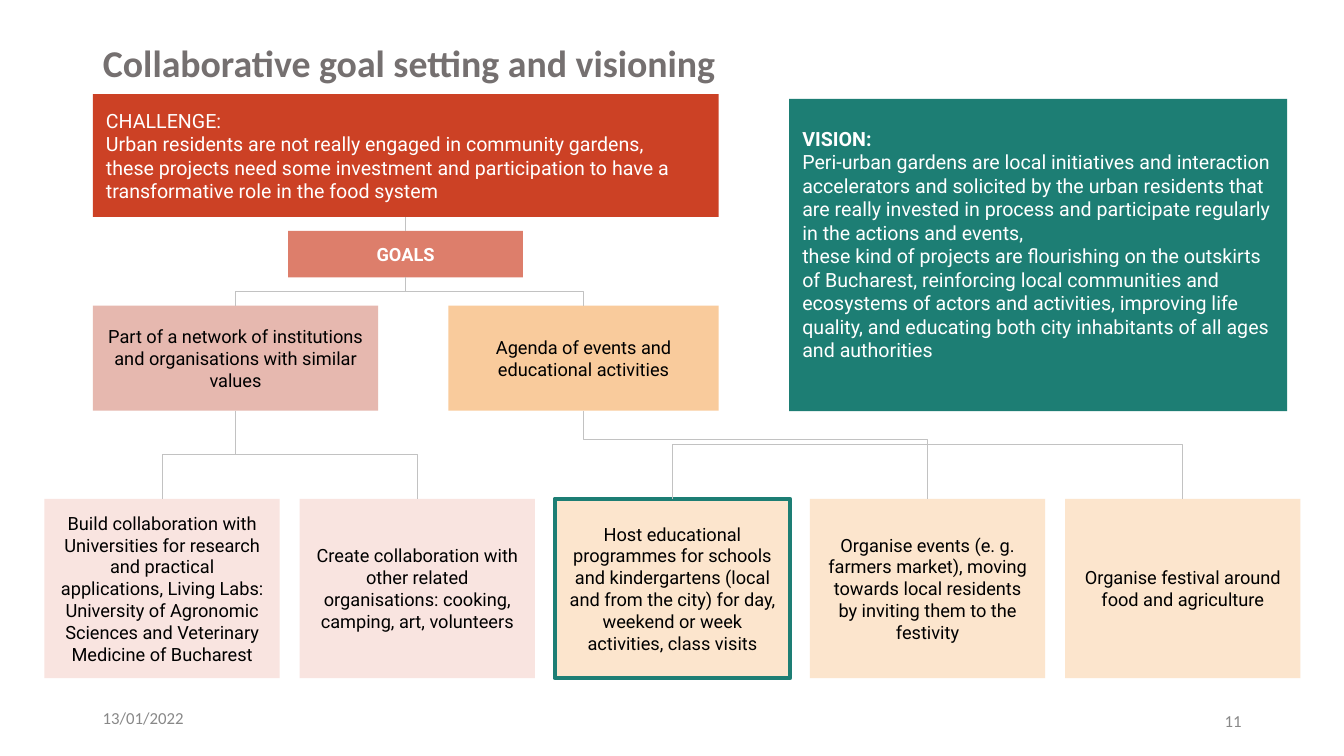
from lxml.etree import SubElement
from pptx import Presentation
from pptx.dml.color import RGBColor
from pptx.enum.shapes import MSO_CONNECTOR as Link, MSO_SHAPE as Preset
from pptx.enum.text import MSO_ANCHOR as Anchor, MSO_AUTO_SIZE as AutoSize, PP_ALIGN as Align
from pptx.oxml.ns import qn
from pptx.util import Cm, Pt

COLORS = {
    "white": "FFFFFF", "black": "000000", "title": "757070", "footer": "888888",
    "challenge": "CC4125", "goals": "DD7E6B", "vision": "1D7E74",
    "network": "E6B8AF", "agenda": "F9CB9C",
    "network_step": "F9E4E0", "agenda_step": "FCE5CD", "link": "C2C2C2",
}


def color(name):
    return RGBColor.from_string(COLORS[name])


class GoalSlide:
    heading_font = "Calibri"
    body_font = "Roboto"
    inset = 0.33

    def __init__(self, presentation):
        self.slide = presentation.slides.add_slide(presentation.slide_layouts[5])

    def fill_text(self, frame, lines, size, font, ink, align, bold_first=False):
        frame.word_wrap = True
        frame.auto_size = AutoSize.NONE
        frame.vertical_anchor = Anchor.MIDDLE
        for index, line in enumerate(lines):
            paragraph = frame.paragraphs[0] if index == 0 else frame.add_paragraph()
            paragraph.text = line
            paragraph.alignment = align
            paragraph.font.size = Pt(size)
            paragraph.font.name = font
            paragraph.font.bold = bold_first and index == 0
            paragraph.font.color.rgb = color(ink)

    def title(self, text, left, top, width, height):
        shape = self.slide.shapes.title
        shape.left, shape.top, shape.width, shape.height = map(Cm, (left, top, width, height))
        self.fill_text(shape.text_frame, [text], 27, self.heading_font, "title", Align.LEFT, True)
        shape.text_frame.paragraphs[0].line_spacing = 0.7

    def footer(self, text, left, top, align):
        shape = self.slide.shapes.add_textbox(Cm(left), Cm(top), Cm(7.62), Cm(1.02))
        self.fill_text(shape.text_frame, [text], 12, self.heading_font, "footer", align)

    def box(self, lines, left, top, width, height, fill, ink="black", size=13,
            align=Align.CENTER, bold_first=False, border=None, bottom=inset):
        shape = self.slide.shapes.add_shape(
            Preset.RECTANGLE, Cm(left), Cm(top), Cm(width), Cm(height))
        shape.shadow.inherit = False
        shape.fill.solid()
        shape.fill.fore_color.rgb = color(fill)
        if border:
            shape.line.color.rgb = color(border)
            shape.line.width = Pt(3)
        else:
            shape.line.fill.background()
        frame = shape.text_frame
        frame.margin_left = frame.margin_right = frame.margin_top = Cm(self.inset)
        frame.margin_bottom = Cm(bottom)
        self.fill_text(frame, lines, size, self.body_font, ink, align, bold_first)

    def link(self, kind, *ends):
        connector = self.slide.shapes.add_connector(kind, *map(Cm, ends))
        connector.line.color.rgb = color("link")
        connector.line.width = Pt(0.75)
        properties = connector._element.spPr
        SubElement(properties, qn("a:effectLst"))
        return properties

    def drop(self, x1, y1, x2, y2, bend=0.5):
        middle_x, middle_y = (x1 + x2) / 2, (y1 + y2) / 2
        run, rise = (x2 - x1) / 2, (y2 - y1) / 2
        properties = self.link(Link.ELBOW, middle_x - rise, middle_y + run,
                               middle_x + rise, middle_y - run)
        properties.find(qn("a:xfrm")).set("rot", str(90 * 60000))
        values = properties.find(qn("a:prstGeom")).find(qn("a:avLst"))
        SubElement(values, qn("a:gd"), name="adj1", fmla=f"val {round(bend * 100000)}")


def main():
    presentation = Presentation()
    presentation.slide_width, presentation.slide_height = Cm(33.87), Cm(19.05)
    page = GoalSlide(presentation)

    page.footer("13/01/2022", 2.34, 17.58, Align.LEFT)
    page.footer("11", 23.92, 17.65, Align.RIGHT)
    page.title("Collaborative goal setting and visioning", 2.34, 1.12, 29.21, 1.17)

    page.box(["CHALLENGE:",
              "Urban residents are not really engaged in community gardens,",
              "these projects need some investment and participation to have a "
              "transformative role in the food system"],
             2.34, 2.37, 15.77, 3.1, "challenge", "white", 14, Align.LEFT)
    page.box(["GOALS"], 7.26, 5.82, 5.92, 1.17, "goals", "white", bold_first=True)
    page.box(["VISION:",
              "Peri-urban gardens are local initiatives and interaction accelerators and "
              "solicited by the urban residents that are really invested in process and "
              "participate regularly in the actions and events,",
              "these kind of projects are flourishing on the outskirts of Bucharest, "
              "reinforcing local communities and ecosystems of actors and activities, "
              "improving life quality, and educating both city inhabitants of all ages "
              "and authorities"],
             19.89, 2.49, 12.55, 7.87, "vision", "white", 14, Align.LEFT, True, bottom=0.87)
    goal_top, goal_height = 7.7, 2.65
    page.box(["Agenda of events and educational activities"],
             11.3, goal_top, 6.81, goal_height, "agenda")
    page.box(["Part of a network of institutions and organisations with similar values"],
             2.34, goal_top, 7.19, goal_height, "network")

    steps = [
        (["Build collaboration with Universities for research and practical "
          "applications, Living Labs:",
          "University of Agronomic Sciences and Veterinary Medicine of Bucharest"],
         "network_step", None),
        (["Create collaboration with other related organisations: cooking, camping, "
          "art, volunteers"], "network_step", None),
        (["Host educational programmes for schools and kindergartens (local and from "
          "the city) for day, weekend or week activities, class visits"],
         "agenda_step", "vision"),
        (["Organise events (e. g. farmers market), moving towards local residents by "
          "inviting them to the festivity"], "agenda_step", None),
        (["Organise festival around food and agriculture"], "agenda_step", None),
    ]
    step_left, step_top, step_width, step_pitch = 1.12, 12.57, 5.93, 6.43
    centers = []
    for index, (lines, fill, border) in enumerate(steps):
        left = step_left + index * step_pitch
        centers.append(left + step_width / 2)
        page.box(lines, left, step_top, step_width, 4.52, fill, border=border)

    goals_x, network_x, agenda_x = 10.22, 5.93, 14.7
    goal_bottom = goal_top + goal_height
    page.link(Link.STRAIGHT, goals_x, 5.47, goals_x, 5.82)
    for goal_x in (network_x, agenda_x):
        page.drop(goals_x, 6.99, goal_x, goal_top)
    for center in centers[:2]:
        page.drop(network_x, goal_bottom, center, step_top)
    host_x, events_x, festival_x = centers[2:]
    page.drop(agenda_x, goal_bottom, events_x, step_top, 0.33)
    for center in (host_x, festival_x):
        page.drop(events_x, 11.21, center, step_top, 0)

    presentation.save("out.pptx")


if __name__ == "__main__":
    main()
